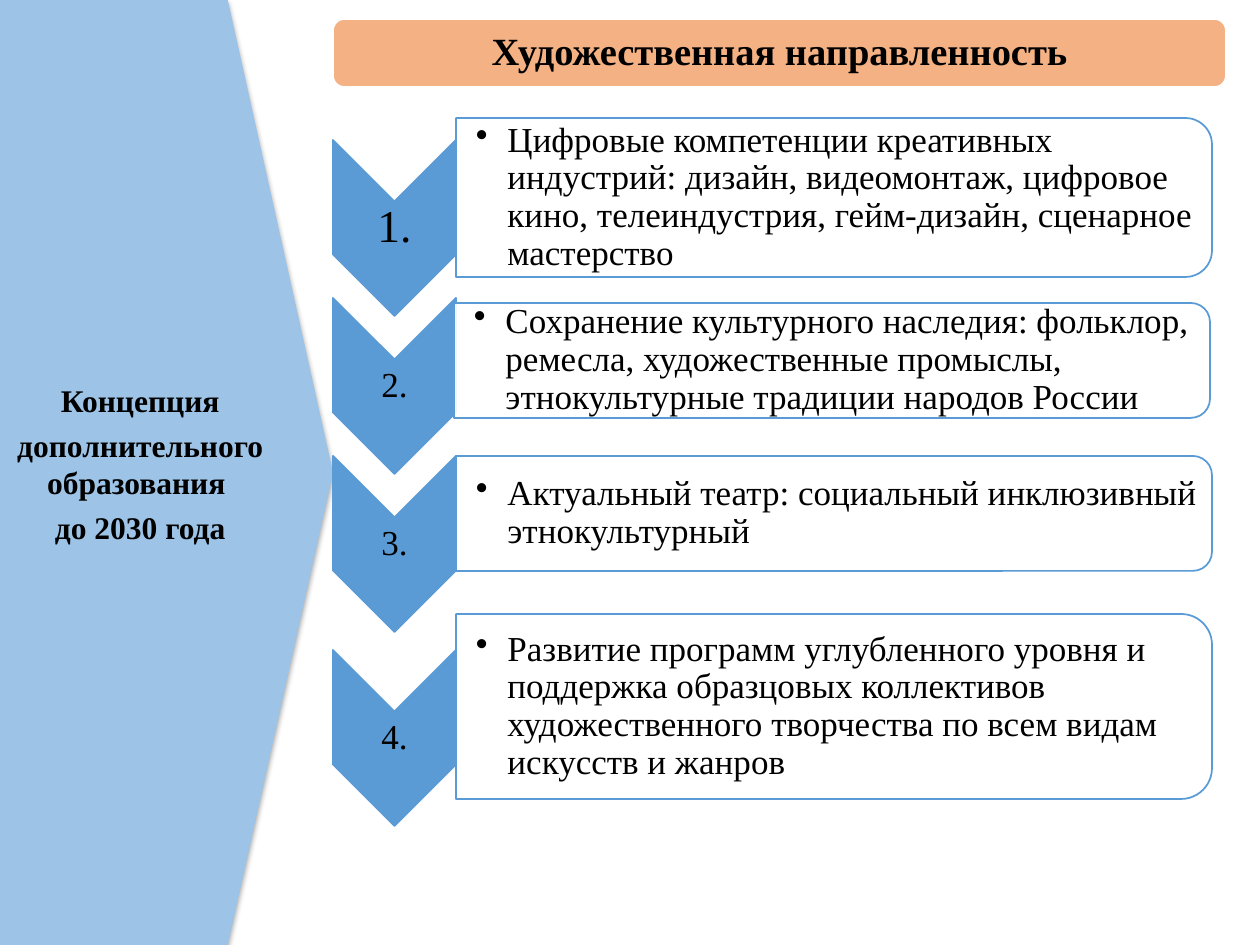
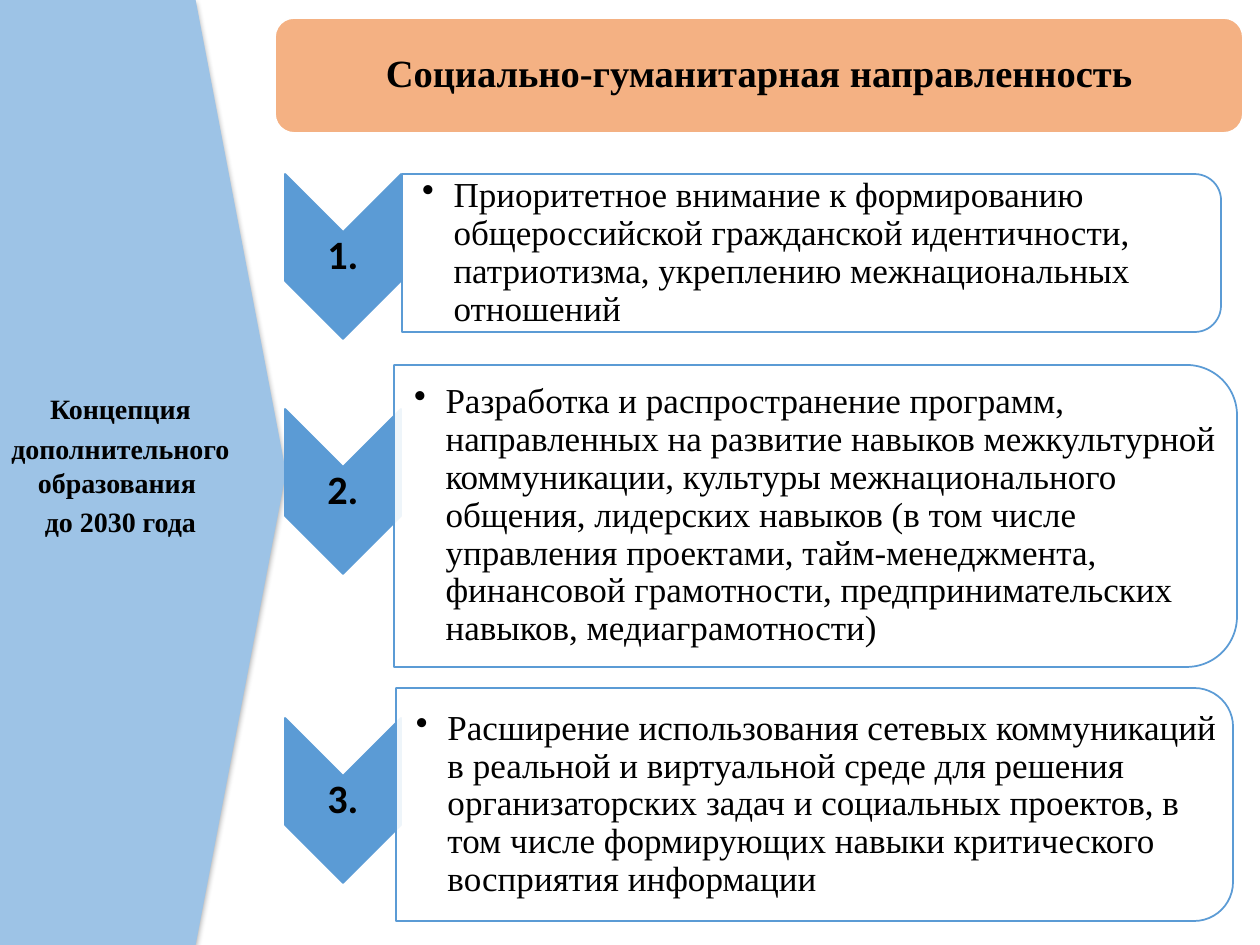
from lxml.etree import SubElement
from pptx import Presentation
from pptx.dml.color import RGBColor
from pptx.enum.shapes import MSO_SHAPE
from pptx.enum.text import MSO_ANCHOR, MSO_AUTO_SIZE, PP_ALIGN
from pptx.oxml.ns import qn
from pptx.util import Emu, Pt

SCALE = 914400 / 126
WIDTH, HEIGHT = 1260, 945
SERIF = "Times New Roman"
COLORS = {"side": "9DC3E6", "banner": "F4B183", "arrow": "5B9BD5",
          "card": "FFFFFF", "edge": "FFFFFF", "text": "000000"}
CONCEPT = ["Концепция", "дополнительного образования ", "до 2030 года"]


def px(value):
    return Emu(round(value * SCALE))


def color(name):
    return RGBColor.from_string(COLORS[name])


def place(shape, box):
    shape.left, shape.top, shape.width, shape.height = map(px, box)


def draw(slide, kind, box, fill, line=None, turn=0):
    x, y, w, h = box
    if turn:
        x, y, w, h = x + (w - h) / 2, y + (h - w) / 2, h, w
    shape = slide.shapes.add_shape(kind, *map(px, (x, y, w, h)))
    shape.rotation = turn
    shape.shadow.inherit = False
    shape.fill.solid()
    shape.fill.fore_color.rgb = color(fill)
    if line:
        shape.line.color.rgb = color(line)
        shape.line.width = Pt(1)
    else:
        shape.line.fill.background()
    return shape


def write(frame, lines, size=20, font=SERIF, bold=False, align=PP_ALIGN.CENTER,
          anchor=MSO_ANCHOR.MIDDLE, inset=(2, 2, 2, 2), leading=0.9, gap=0, bullet=False):
    frame.word_wrap = True
    frame.auto_size = MSO_AUTO_SIZE.NONE
    frame.vertical_anchor = anchor
    (frame.margin_left, frame.margin_top,
     frame.margin_right, frame.margin_bottom) = map(px, inset)
    for i, line in enumerate(lines):
        para = frame.add_paragraph() if i else frame.paragraphs[0]
        para.alignment = align
        para.line_spacing = leading
        para.space_before = Pt(gap if i else 0)
        run = para.add_run()
        run.text = line
        run.font.size = Pt(size)
        run.font.name = font
        run.font.bold = bold
        run.font.color.rgb = color("text")
        if bullet:
            props = para._p.get_or_add_pPr()
            props.set("marL", "228600")
            props.set("indent", "-228600")
            SubElement(props, qn("a:buChar"), char="•")


def label(slide, box, lines, **style):
    write(slide.shapes.add_textbox(*map(px, box)).text_frame, lines, **style)


def side(slide, box, top, size):
    shape = draw(slide, MSO_SHAPE.PENTAGON, box, "side")
    shape.adjustments[0] = 0.316
    effects = shape._element.spPr.find(qn("a:effectLst"))
    shadow = SubElement(effects, qn("a:outerShdw"), blurRad=str(Pt(3.1)),
                        dist=str(Pt(1.8)), dir="5400000", rotWithShape="0")
    tint = SubElement(shadow, qn("a:srgbClr"), val=COLORS["text"])
    SubElement(tint, qn("a:alpha"), val="35000")
    write(shape.text_frame, CONCEPT, size=size, bold=True, anchor=MSO_ANCHOR.TOP,
          inset=(9, top, 9, 5), leading=1.0, gap=size * 0.22)


def banner(slide, box, text):
    shape = draw(slide, MSO_SHAPE.ROUNDED_RECTANGLE, box, "banner", "edge")
    title = slide.shapes.title
    place(title, box)
    write(title.text_frame, [text], size=22, bold=True, inset=(11, 11, 11, 11))
    shape._element.addnext(title._element)


def arrow(slide, box, text, style):
    draw(slide, MSO_SHAPE.CHEVRON, box, "arrow", "arrow", turn=90)
    label(slide, box, [text], **style)


def card(slide, box, text):
    x, y, w, h = box
    shape = draw(slide, MSO_SHAPE.ROUND_2_SAME_RECTANGLE, box, "card", "arrow", turn=90)
    tint = shape._element.spPr.find(qn("a:solidFill"))[0]
    SubElement(tint, qn("a:alpha"), val="90000")
    label(slide, (x, y, w - h // 20, h), [text], align=PP_ALIGN.LEFT,
          inset=(20, 1, 1, 1), bullet=True)


def steps(slide, box, size, rows, styles):
    x, y, _, _ = box
    w, h = size
    for i, (drop, (dx, dy, wide, high), text) in enumerate(rows):
        arrow(slide, (x, y + drop, w, h), f"{i + 1}.", styles[min(i, len(styles) - 1)])
        card(slide, (x + dx, y + dy, wide, high), text)


ART = [
    (22, (123, 0, 756, 159),
     "Цифровые компетенции креативных индустрий: дизайн, видеомонтаж, цифровое кино, "
     "телеиндустрия, гейм-дизайн, сценарное мастерство"),
    (180, (121, 185, 756, 115),
     "Сохранение культурного наследия: фольклор, ремесла, художественные промыслы, "
     "этнокультурные традиции народов России"),
    (338, (123, 338, 756, 115),
     "Актуальный театр: социальный инклюзивный этнокультурный"),
    (532, (123, 496, 756, 185),
     "Развитие программ углубленного уровня и поддержка образцовых коллективов "
     "художественного творчества по всем видам искусств и жанров"),
]
SOCIAL = [
    (0, (117, 0, 819, 158),
     "Приоритетное внимание к формированию общероссийской гражданской идентичности, "
     "патриотизма, укреплению межнациональных отношений"),
    (235, (109, 191, 843, 302),
     "Разработка и распространение программ, направленных на развитие навыков "
     "межкультурной коммуникации, культуры межнационального общения, лидерских навыков "
     "(в том числе управления проектами, тайм-менеджмента, финансовой грамотности, "
     "предпринимательских навыков, медиаграмотности)"),
    (544, (111, 514, 837, 233),
     "Расширение использования сетевых коммуникаций в реальной и виртуальной среде для "
     "решения организаторских задач и социальных проектов, в том числе формирующих навыки "
     "критического восприятия информации"),
]


def main():
    deck = Presentation()
    deck.slide_width, deck.slide_height = px(WIDTH), px(HEIGHT)
    blank = deck.slide_layouts[5]

    slide = deck.slides.add_slide(blank)
    side(slide, (0, 0, 333, HEIGHT), 381, 18)
    banner(slide, (333, 19, 893, 68), "Художественная направленность")
    steps(slide, (333, 118, 880, 710), (123, 176), ART, [{"size": 26}, {"size": 20}])

    slide = deck.slides.add_slide(blank)
    side(slide, (0, 0, 286, HEIGHT), 392, 16)
    banner(slide, (275, 18, 968, 115), "Социально-гуманитарная направленность")
    steps(slide, (285, 174, 952, 748), (116, 165), SOCIAL,
          [{"size": 23, "font": "Calibri", "bold": True}])

    deck.save("out.pptx")


if __name__ == "__main__":
    main()
